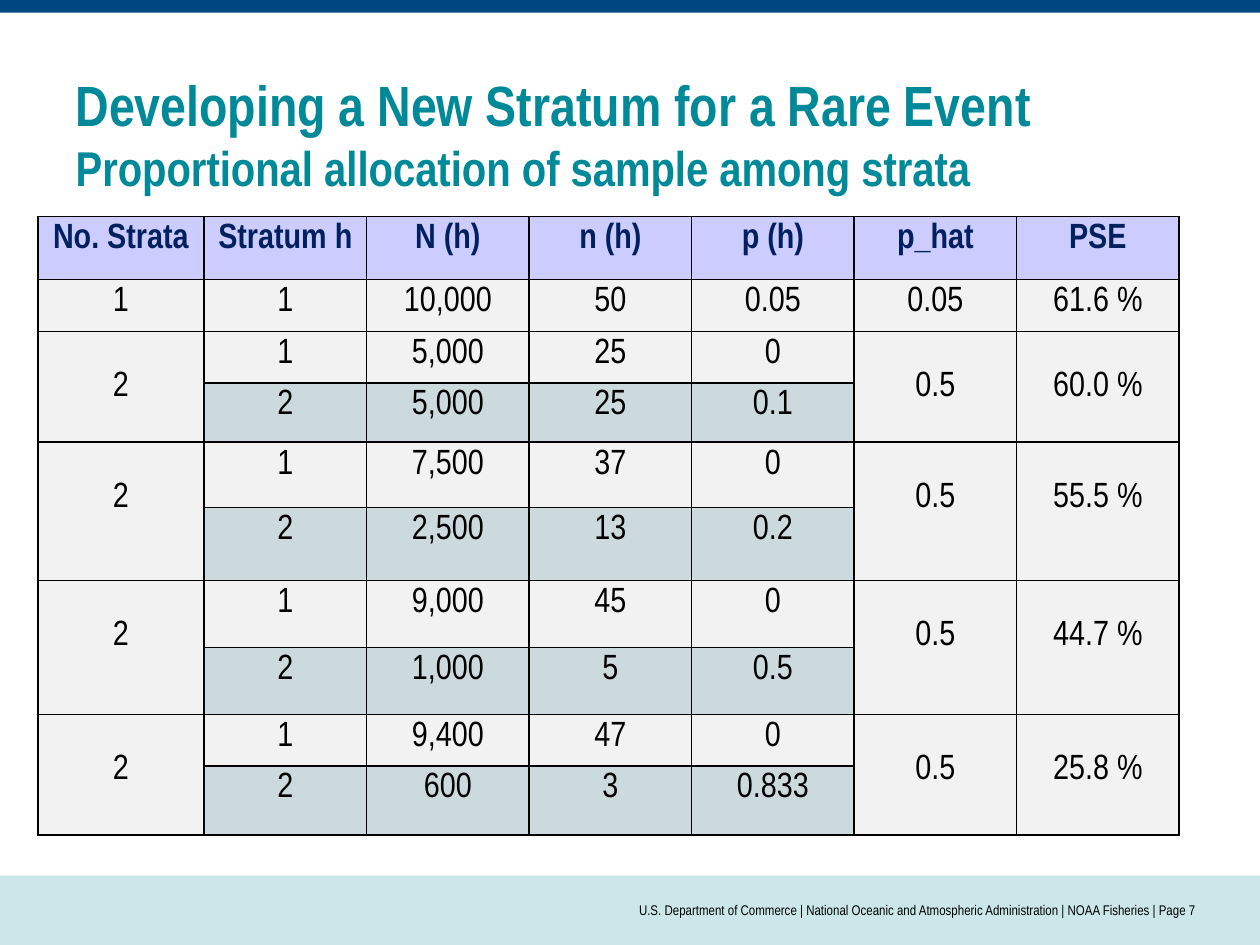
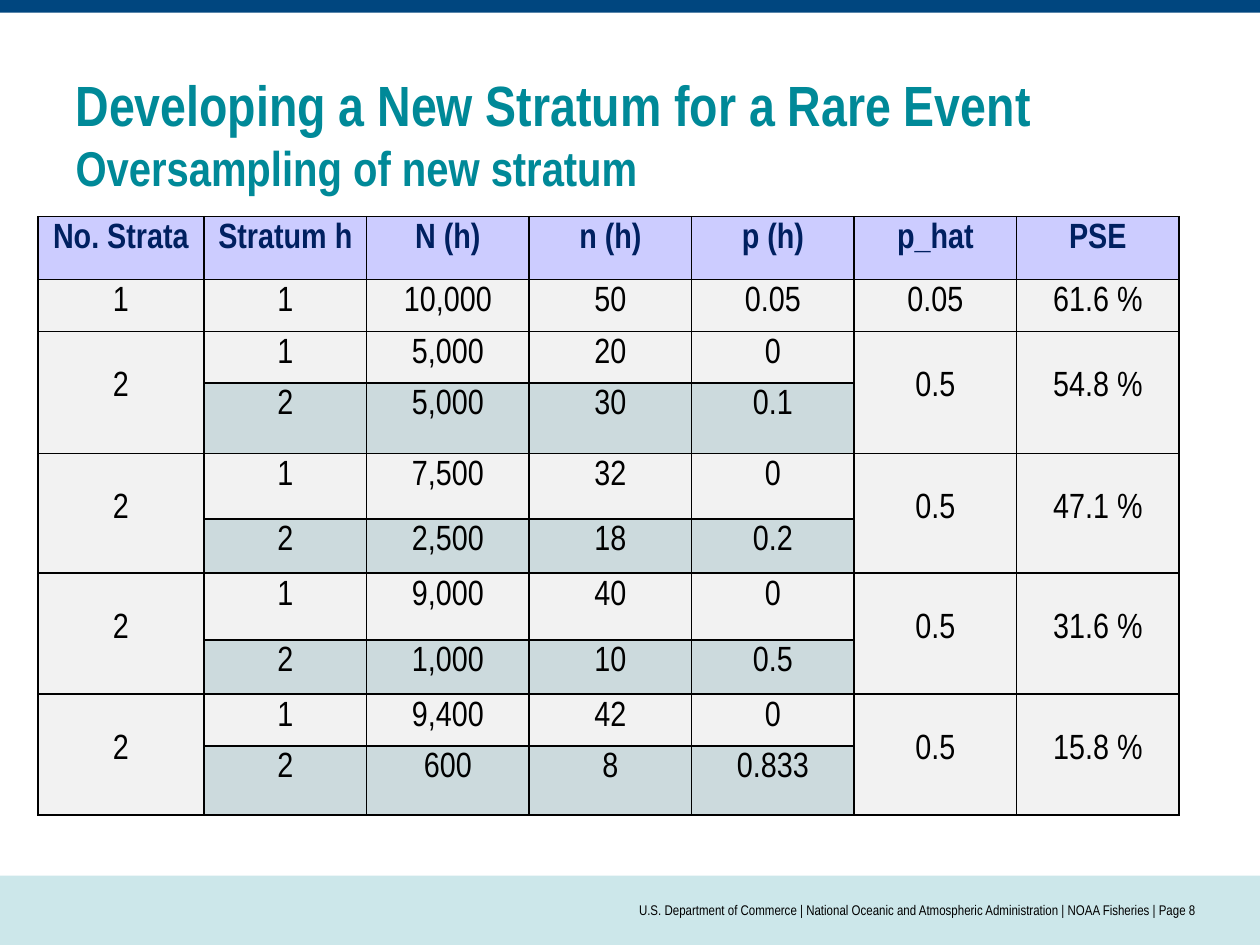
from dataclasses import dataclass

from lxml import etree
from pptx import Presentation
from pptx.dml.color import RGBColor
from pptx.enum.shapes import MSO_SHAPE
from pptx.enum.text import MSO_ANCHOR, MSO_AUTO_SIZE, PP_ALIGN
from pptx.oxml.ns import qn
from pptx.util import Inches, Pt

RECTANGLE = MSO_SHAPE.RECTANGLE
TOP, MIDDLE = MSO_ANCHOR.TOP, MSO_ANCHOR.MIDDLE
LEFT, CENTER, RIGHT = PP_ALIGN.LEFT, PP_ALIGN.CENTER, PP_ALIGN.RIGHT
NO_AUTOFIT = MSO_AUTO_SIZE.NONE

BLACK = RGBColor(0x00, 0x00, 0x00)
TEAL = RGBColor(0x00, 0x89, 0x98)
NAVY = RGBColor(0x00, 0x20, 0x60)
HEADER_LILAC = RGBColor(0xCC, 0xCC, 0xFF)
CELL_GREY = RGBColor(0xF2, 0xF2, 0xF2)
NEW_STRATUM_GREY = RGBColor(0xCC, 0xDA, 0xDD)
TOP_BAND_BLUE = RGBColor(0x00, 0x46, 0x7F)
FOOTER_BAND_AQUA = RGBColor(0xCC, 0xE7, 0xEA)

FONT = "Arial Narrow"
TITLE = "Developing a New Stratum for a Rare Event"
FOOTER = ("U.S. Department of Commerce", "National Oceanic and Atmospheric Administration",
          "NOAA Fisheries")
FOOTER_SEPARATOR = " | "  # en spaces around the bar

HEADERS = ("No. Strata", "Stratum h", "N (h)", "n (h)", "p (h)", "p_hat", "PSE")
UNSTRATIFIED = ("1", "1", "10,000", "50", "0.05", "0.05", "61.6 %")
MERGED_COLUMNS = (0, 5, 6)
COLUMN_WIDTHS = (1.32,) + (1.29,) * 6


@dataclass(frozen=True)
class Band:
    top: float
    height: float
    color: RGBColor


@dataclass(frozen=True)
class Split:
    """Population sizes of the two strata and the rate of the event in the new one."""
    old_size: str
    new_size: str
    new_rate: str


@dataclass(frozen=True)
class Allocation:
    """Sample sizes of the two strata and the resulting error."""
    old_sample: str
    new_sample: str
    pse: str


@dataclass(frozen=True)
class Scenario:
    subtitle: str
    page: int
    allocations: tuple[Allocation, ...]
    row_heights: tuple[float, ...]


BANDS = (Band(6.95, 0.55, FOOTER_BAND_AQUA), Band(0, 0.1, TOP_BAND_BLUE))

SPLITS = (
    Split("5,000", "5,000", "0.1"),
    Split("7,500", "2,500", "0.2"),
    Split("9,000", "1,000", "0.5"),
    Split("9,400", "600", "0.833"),
)

SCENARIOS = (
    Scenario(
        "Proportional allocation of sample among strata", 7,
        (Allocation("25", "25", "60.0 %"), Allocation("37", "13", "55.5 %"),
         Allocation("45", "5", "44.7 %"), Allocation("47", "3", "25.8 %")),
        (0.5, 0.41, 0.41, 0.47, 0.52, 0.58, 0.53, 0.53, 0.41, 0.55),
    ),
    Scenario(
        "Oversampling of new stratum", 8,
        (Allocation("20", "30", "54.8 %"), Allocation("32", "18", "47.1 %"),
         Allocation("40", "10", "31.6 %"), Allocation("42", "8", "15.8 %")),
        (0.5, 0.41, 0.41, 0.56, 0.52, 0.43, 0.53, 0.43, 0.41, 0.55),
    ),
)


def add_text(paragraph, text: str, *, size: float, color: RGBColor = BLACK,
             bold: bool = False, align=LEFT, line_spacing: float | None = None) -> None:
    paragraph.alignment = align
    if line_spacing:
        paragraph.line_spacing = line_spacing
    run = paragraph.add_run()
    run.text = text
    run.font.name = FONT
    run.font.size = Pt(size)
    run.font.bold = bold
    run.font.color.rgb = color


def add_band(slide, band: Band) -> None:
    shape = slide.shapes.add_shape(RECTANGLE, 0, Inches(band.top), Inches(10), Inches(band.height))
    shape.shadow.inherit = False
    shape.fill.solid()
    shape.fill.fore_color.rgb = band.color
    shape.line.fill.background()


def set_title(slide, subtitle: str) -> None:
    title = slide.shapes.title
    title.left, title.top = Inches(0.5), Inches(0.5)
    title.width, title.height = Inches(9), Inches(1.01)
    frame = title.text_frame
    frame.auto_size = NO_AUTOFIT
    frame.word_wrap = True
    frame.vertical_anchor = TOP
    paragraph = frame.paragraphs[0]
    add_text(paragraph, TITLE, size=32.4, color=TEAL, bold=True)
    paragraph.add_line_break()
    add_text(paragraph, subtitle, size=27.9, color=TEAL, bold=True)


def add_footer(slide, page: int) -> None:
    box = slide.shapes.add_textbox(Inches(2.5), Inches(6.95), Inches(7), Inches(0.55))
    frame = box.text_frame
    frame.word_wrap = True
    frame.vertical_anchor = MIDDLE
    frame.margin_left = frame.margin_right = 0
    text = FOOTER_SEPARATOR.join(FOOTER + (f"Page {page}",))
    add_text(frame.paragraphs[0], text, size=8, align=RIGHT)


def add_borders(cell) -> None:
    """Put the four edges ahead of the fill, as the schema orders them."""
    properties = cell._tc.get_or_add_tcPr()
    for position, edge in enumerate(("a:lnL", "a:lnR", "a:lnT", "a:lnB")):
        line = etree.Element(qn(edge), w=str(Pt(1)))
        fill = etree.SubElement(line, qn("a:solidFill"))
        etree.SubElement(fill, qn("a:srgbClr"), val=str(BLACK))
        properties.insert(position, line)


def table_rows(scenario: Scenario) -> list[tuple[str, ...]]:
    rows = [HEADERS, UNSTRATIFIED]
    for split, allocation in zip(SPLITS, scenario.allocations):
        rows.append(("2", "1", split.old_size, allocation.old_sample, "0", "0.5", allocation.pse))
        rows.append(("", "2", split.new_size, allocation.new_sample, split.new_rate, "", ""))
    return rows


def add_strata_table(slide, scenario: Scenario) -> None:
    rows = table_rows(scenario)
    table = slide.shapes.add_table(
        len(rows), len(HEADERS), Inches(0.3), Inches(1.72),
        Inches(sum(COLUMN_WIDTHS)), Inches(sum(scenario.row_heights))).table
    table.first_row = table.horz_banding = False
    for column, width in zip(table.columns, COLUMN_WIDTHS):
        column.width = Inches(width)
    for row, height in zip(table.rows, scenario.row_heights):
        row.height = Inches(height)

    for r, values in enumerate(rows):
        is_header = r == 0
        is_split = r >= 2
        is_new_stratum = is_split and r % 2 == 1
        for c, value in enumerate(values):
            cell = table.cell(r, c)
            is_merged = is_split and c in MERGED_COLUMNS
            if is_merged and not is_new_stratum:
                cell.merge(table.cell(r + 1, c))
            cell.margin_top = Inches(0.05)
            cell.margin_bottom = 0
            cell.fill.solid()
            if is_header:
                cell.fill.fore_color.rgb = HEADER_LILAC
            elif is_new_stratum and not is_merged:
                cell.fill.fore_color.rgb = NEW_STRATUM_GREY
            else:
                cell.fill.fore_color.rgb = CELL_GREY
            add_borders(cell)
            if value:
                add_text(cell.text_frame.paragraphs[0], value, size=20, align=CENTER,
                         color=NAVY if is_header else BLACK, bold=is_header,
                         line_spacing=2.0 if is_merged else None)


def main() -> None:
    presentation = Presentation()
    presentation.slide_width, presentation.slide_height = Inches(10), Inches(7.5)
    title_only = presentation.slide_layouts[5]
    for scenario in SCENARIOS:
        slide = presentation.slides.add_slide(title_only)
        for band in BANDS:
            add_band(slide, band)
        set_title(slide, scenario.subtitle)
        add_strata_table(slide, scenario)
        add_footer(slide, scenario.page)
    presentation.save("out.pptx")


if __name__ == "__main__":
    main()
